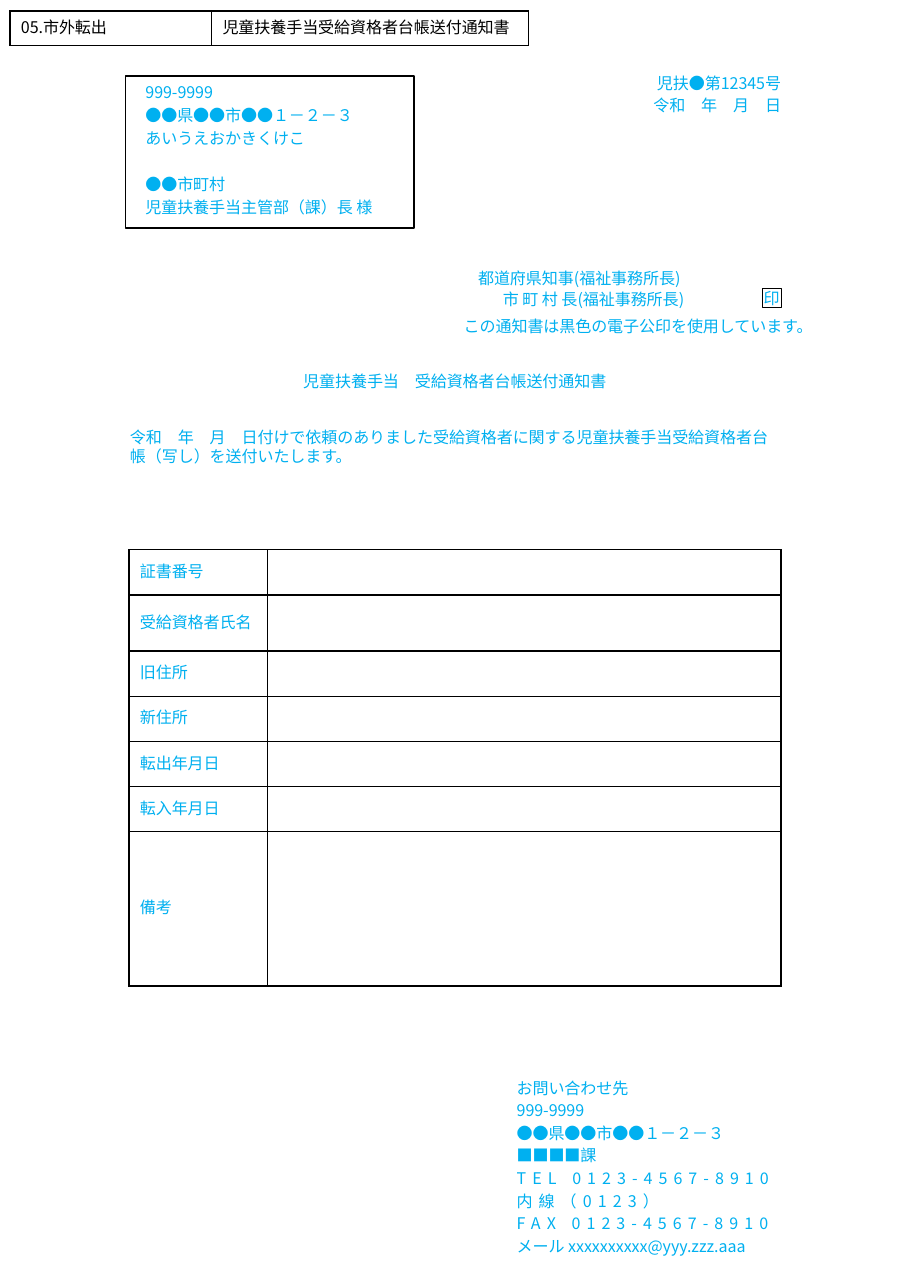
import dataclasses
import pptx
import pptx.dml.color
import pptx.enum.shapes
import pptx.enum.text
import pptx.oxml.ns
import pptx.util
from lxml import etree

Inches = pptx.util.Inches
Pt = pptx.util.Pt
Align = pptx.enum.text.PP_ALIGN
Anchor = pptx.enum.text.MSO_ANCHOR
qn = pptx.oxml.ns.qn


@dataclasses.dataclass(frozen=True)
class Theme:
    font: str = "Noto Sans CJK JP"
    size: float = 10.5
    line: float = 12.6
    ink: str = "00B0F0"
    black: str = "000000"


THEME = Theme()
FLUSH = {"margin_left": Inches(0.01), "margin_top": Inches(0.02),
         "margin_right": 0, "margin_bottom": 0, "word_wrap": True,
         "vertical_anchor": Anchor.TOP}
INSET = {"margin_left": Inches(0.18), "margin_top": Inches(0.06),
         "word_wrap": False, "vertical_anchor": Anchor.TOP}
TIGHT = dict.fromkeys(
    ("margin_left", "margin_top", "margin_right", "margin_bottom"), 0)

ADDRESS = ["999-9999", "●●県●●市●●１－２－３", "あいうえおかきくけこ",
           "●●市町村", "児童扶養手当主管部（課）長 様"]
CONTACT = ["お問い合わせ先", "999-9999", "●●県●●市●●１－２－３", "■■■■課",
           "TEL 0123-4567-8910", "内線（0123）", "FAX 0123-4567-8910",
           "メール xxxxxxxxxx@yyy.zzz.aaa"]
FIELDS = [("証書番号", 0.41), ("受給資格者氏名", 0.51), ("旧住所", 0.41),
          ("新住所", 0.41), ("転出年月日", 0.41), ("転入年月日", 0.41),
          ("備考", 1.4)]


def rgb(code):
    return pptx.dml.color.RGBColor.from_string(code)


def assign(item, style):
    for name, value in style.items():
        setattr(item, name, value)


def write(frame, lines, align=Align.LEFT, gap=0, color=THEME.ink,
          wide=(), breaks=None):
    """Fill a frame; wide lists spaced-out lines, breaks maps line to gap."""
    for i, text in enumerate(lines):
        para = frame.paragraphs[0] if i == 0 else frame.add_paragraph()
        before = (breaks or {}).get(i, gap) if i else 0
        assign(para, {"alignment": align, "line_spacing": Pt(THEME.line),
                      "space_before": Pt(before), "space_after": Pt(0)})
        if not text:
            continue
        run = para.add_run()
        run.text = text
        assign(run.font, {"name": THEME.font, "size": Pt(THEME.size),
                          "bold": False})
        run.font.color.rgb = rgb(color)
        props = run.font._element
        etree.SubElement(props, qn("a:ea")).set("typeface", THEME.font)
        if i in wide:
            props.set("spc", "400")


def label(slide, box, lines, style=FLUSH, **text):
    shape = slide.shapes.add_textbox(*map(Inches, box))
    assign(shape.text_frame, style)
    write(shape.text_frame, lines, **text)


def frame(slide, box, lines, width, style, **text):
    """Add an outlined rectangle with text."""
    kind = pptx.enum.shapes.MSO_SHAPE.RECTANGLE
    shape = slide.shapes.add_shape(kind, *map(Inches, box))
    shape.shadow.inherit = False
    shape.fill.background()
    shape.line.color.rgb = rgb(THEME.black)
    shape.line.width = Pt(width)
    assign(shape.text_frame, style)
    write(shape.text_frame, lines, **text)


def border(cell):
    props = cell._tc.get_or_add_tcPr()
    for side in ("lnL", "lnR", "lnT", "lnB"):
        line = etree.SubElement(props, qn("a:" + side), w=str(Pt(1)))
        fill = etree.SubElement(line, qn("a:solidFill"))
        etree.SubElement(fill, qn("a:srgbClr"), val=THEME.black)


def grid(slide, left, top, widths, heights, rows, **text):
    size = [Inches(v) for v in (left, top, sum(widths), sum(heights))]
    table = slide.shapes.add_table(len(rows), len(widths), *size).table
    assign(table, {"first_row": False, "horz_banding": False})
    for col, width in zip(table.columns, widths):
        col.width = Inches(width)
    for row, height, words in zip(table.rows, heights, rows):
        row.height = Inches(height)
        for cell, word in zip(row.cells, words):
            border(cell)
            cell.fill.background()
            cell.vertical_anchor = Anchor.MIDDLE
            write(cell.text_frame, [word], **text)


def title(slide, box, text):
    shape = slide.shapes.title
    names = ("left", "top", "width", "height")
    assign(shape, dict(zip(names, map(Inches, box))))
    assign(shape.text_frame, FLUSH)
    shape.text_frame.auto_size = pptx.enum.text.MSO_AUTO_SIZE.NONE
    write(shape.text_frame, [text], align=Align.CENTER)


def main():
    deck = pptx.Presentation()
    deck.slide_width, deck.slide_height = Inches(8.26), Inches(11.69)
    slide = deck.slides.add_slide(deck.slide_layouts[5])

    grid(slide, 0.09, 0.1, [1.83, 2.88], [0.31],
         [["05.市外転出", "児童扶養手当受給資格者台帳送付通知書"]],
         color=THEME.black)
    title(slide, (2.64, 3.35, 2.97, 0.19),
          "児童扶養手当　受給資格者台帳送付通知書")
    label(slide, (1.17, 3.86, 5.92, 0.37),
          ["令和　年　月　日付けで依頼のありました受給資格者に関する"
           "児童扶養手当受給資格者台帳（写し）を送付いたします。"])
    grid(slide, 1.17, 4.99, [1.26, 4.66], [high for _, high in FIELDS],
         [[name, ""] for name, _ in FIELDS], align=Align.JUSTIFY)
    label(slide, (4.51, 9.78, 2.58, 1.62), CONTACT,
          INSET | {"margin_top": Inches(0.05),
                   "vertical_anchor": Anchor.MIDDLE},
          gap=2.1, wide=(4, 5, 6))

    for box, lines in (
            ((5.71, 0.65, 1.38, 0.19), ["児扶●第12345号"]),
            ((5.8, 0.85, 1.29, 0.19), ["令和　年　月　日"]),
            ((3.97, 2.42, 2.24, 0.38),
             ["都道府県知事(福祉事務所長) ", "市 町 村 長(福祉事務所長)"]),
            ((3.97, 2.85, 3.41, 0.19),
             ["この通知書は黒色の電子公印を使用しています。"])):
        label(slide, box, lines, align=Align.RIGHT, gap=1.1)

    frame(slide, (6.92, 2.62, 0.17, 0.17), ["印"], 0.5,
          TIGHT | {"word_wrap": True, "vertical_anchor": Anchor.MIDDLE},
          align=Align.CENTER)
    frame(slide, (1.14, 0.69, 2.62, 1.38), ADDRESS, 1, INSET,
          gap=2.4, breaks={3: 17.4})
    deck.save("out.pptx")


if __name__ == "__main__":
    main()
